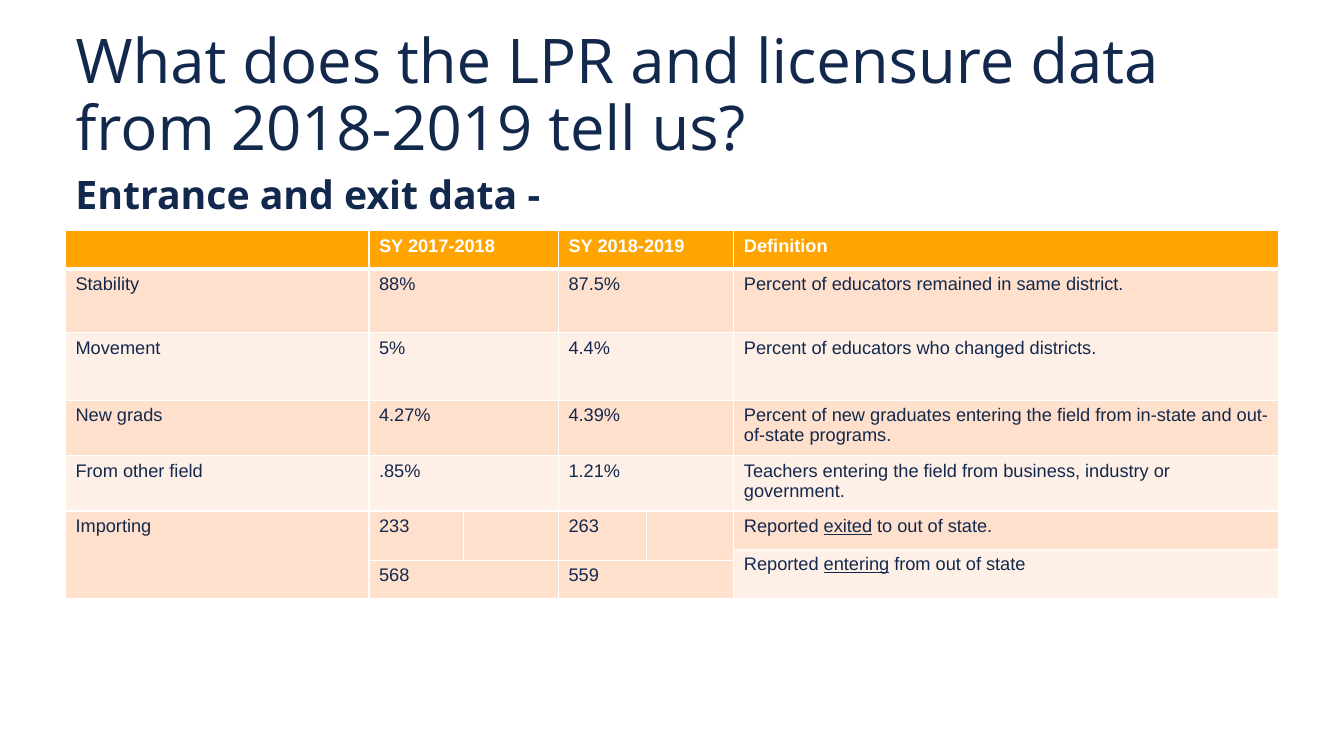
"""Build a slide with a table of educator entrance and exit data."""
from dataclasses import dataclass

from lxml import etree
from pptx import Presentation
from pptx import util as u
from pptx.dml.color import RGBColor
from pptx.enum import text
from pptx.oxml.ns import qn


@dataclass(frozen=True)
class Theme:
    navy: str = "12284C"
    white: str = "FFFFFF"
    orange: str = "FFA400"
    peach: str = "FFE0CC"
    cream: str = "FFF0E7"
    heading_font: str = "Open Sans"
    table_font: str = "Arial"
    title_size: int = 44
    subtitle_size: int = 28
    table_size: int = 13
    rule: int = 1
    header_rule: int = 3


@dataclass(frozen=True)
class Entry:
    row: int
    col: int
    text: str
    rows: int = 1
    cols: int = 1


THEME = Theme()
COLS = [3.01, 0.94, 0.94, 0.87, 0.87, 5.4]
ROWS = [0.38, 0.63, 0.67, 0.55, 0.55, 0.38, 0.11, 0.38]
DEFINITION_COL = len(COLS) - 1
MEASURES = [
    ("", "SY 2017-2018", "SY 2018-2019", "Definition"),
    ("Stability", "88%", "87.5%", "Percent of educators remained in same district."),
    ("Movement", "5%", "4.4%", "Percent of educators who changed districts."),
    ("New grads", "4.27%", "4.39%",
     "Percent of new graduates entering the field from in-state and out-of-state programs."),
    ("From other field", ".85%", "1.21%",
     "Teachers entering the field from business, industry or government."),
]
IMPORTING = [
    Entry(5, 0, "Importing", rows=3),
    Entry(5, 1, "233", rows=2),
    Entry(5, 2, "", rows=2),
    Entry(5, 3, "263", rows=2),
    Entry(5, 4, "", rows=2),
    Entry(5, 5, "Reported _exited_ to out of state."),
    Entry(6, 5, "Reported _entering_ from out of state", rows=2),
    Entry(7, 1, "568", cols=2),
    Entry(7, 3, "559", cols=2),
]


def measure_entries() -> list[Entry]:
    """Place each measure in the grid, its two years spanning two columns each."""
    return [Entry(row, col, value, cols=span)
            for row, values in enumerate(MEASURES)
            for value, col, span in zip(values, (0, 1, 3, 5), (1, 2, 2, 1))]


def style(p, font: str, size: int, color: str, bold: bool = False) -> None:
    """Set the font of a whole paragraph."""
    p.font.name = font
    p.font.size = u.Pt(size)
    p.font.bold = bold
    p.font.color.rgb = RGBColor.from_string(color)


def write_heading(sp, words: str, box: tuple, size: int, bold: bool, anchor) -> None:
    """Place a shape and fill it with one left-aligned heading."""
    sp.left, sp.top, sp.width, sp.height = map(u.Inches, box)
    tf = sp.text_frame
    tf.word_wrap = True
    tf.auto_size = text.MSO_AUTO_SIZE.NONE
    tf.vertical_anchor = anchor
    p = tf.paragraphs[0]
    p.text = words
    p.alignment = text.PP_ALIGN.LEFT
    p.line_spacing = 0.9
    style(p, THEME.heading_font, size, THEME.navy, bold)


def add_border(cell, side: str, width: int) -> None:
    """Draw a white rule along one side of a cell."""
    ln = etree.SubElement(cell._tc.get_or_add_tcPr(), qn(f"a:ln{side}"), w=str(u.Pt(width)))
    fill = etree.SubElement(ln, qn("a:solidFill"))
    etree.SubElement(fill, qn("a:srgbClr"), val=THEME.white)


def format_cell(cell, row: int, col: int) -> None:
    """Give a cell its rules, fill and font according to its place."""
    for side in "LRTB":
        heavy = (row, side) in ((0, "B"), (1, "T"))
        add_border(cell, side, THEME.header_rule if heavy else THEME.rule)
    if row == 0:
        color = THEME.orange
    elif row in (2, 4) or (row > 5 and col == DEFINITION_COL):
        color = THEME.cream
    else:
        color = THEME.peach
    cell.fill.solid()
    cell.fill.fore_color.rgb = RGBColor.from_string(color)
    style(cell.text_frame.paragraphs[0], THEME.table_font, THEME.table_size,
          THEME.navy if row else THEME.white, bold=row == 0)


def write_entry(table, entry: Entry) -> None:
    """Merge the span of an entry and write it, underlining words between underscores."""
    cell = table.cell(entry.row, entry.col)
    if entry.rows > 1 or entry.cols > 1:
        cell.merge(table.cell(entry.row + entry.rows - 1, entry.col + entry.cols - 1))
    p = cell.text_frame.paragraphs[0]
    for i, part in enumerate(entry.text.split("_")):
        if part:
            r = p.add_run()
            r.text = part
            if i % 2:
                r.font.underline = True


def add_data_table(s) -> None:
    """Add the entrance and exit table."""
    table = s.shapes.add_table(len(ROWS), len(COLS), u.Inches(0.65), u.Inches(2.29),
                               u.Inches(sum(COLS)), u.Inches(sum(ROWS))).table
    for column, width in zip(table.columns, COLS):
        column.width = u.Inches(width)
    for i, height in enumerate(ROWS):
        table.rows[i].height = u.Inches(height)
        for j in range(len(COLS)):
            format_cell(table.cell(i, j), i, j)
    for entry in measure_entries() + IMPORTING:
        write_entry(table, entry)


def main() -> None:
    """Build and save the slide."""
    prs = Presentation()
    prs.slide_width, prs.slide_height = u.Inches(13.33), u.Inches(7.5)
    s = prs.slides.add_slide(prs.slide_layouts[5])
    write_heading(s.shapes.title, "What does the LPR and licensure data from 2018-2019 tell us?",
                  (0.65, 0.24, 11.5, 1.45), THEME.title_size, False, text.MSO_ANCHOR.MIDDLE)
    box = (0.65, 1.69, 12.5, 0.6)
    write_heading(s.shapes.add_textbox(*map(u.Inches, box)), "Entrance and exit data -",
                  box, THEME.subtitle_size, True, text.MSO_ANCHOR.TOP)
    add_data_table(s)
    prs.save("out.pptx")


if __name__ == "__main__":
    main()
